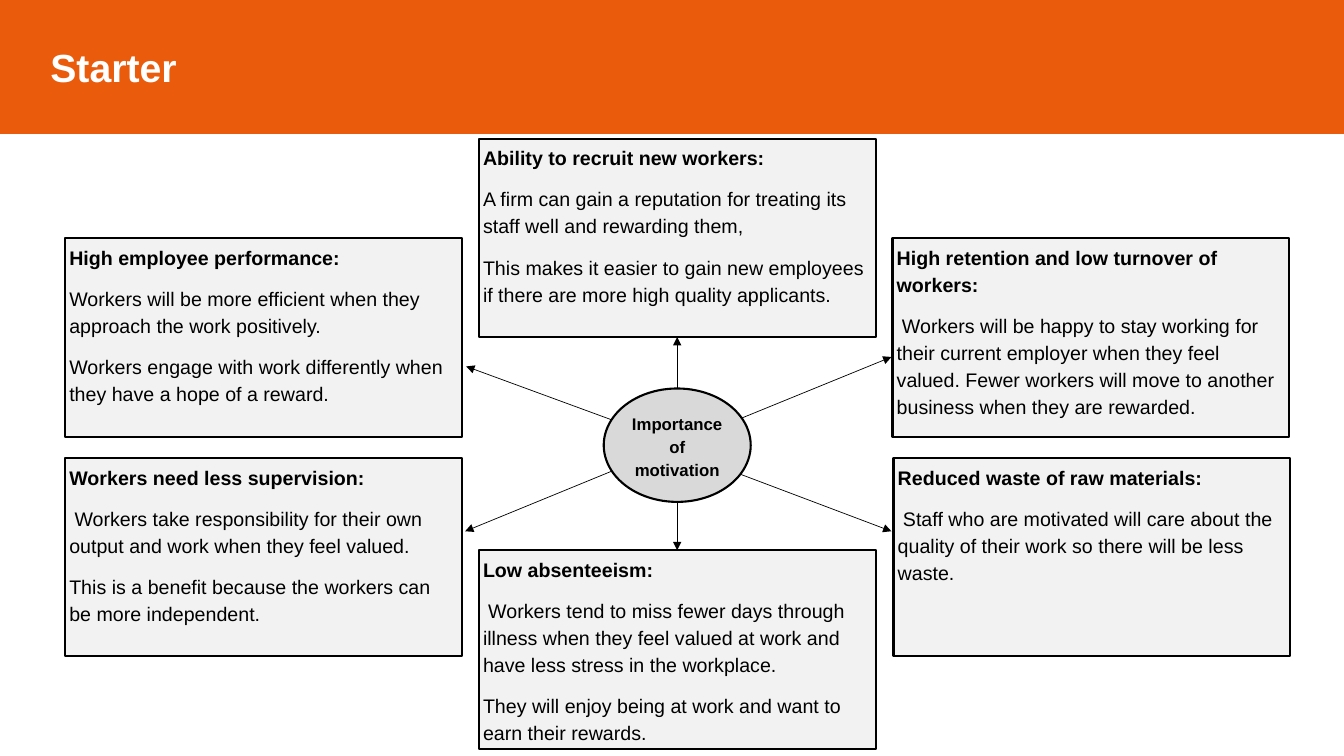
from lxml.etree import SubElement
from pptx import Presentation
from pptx.dml.color import RGBColor
from pptx.enum.shapes import MSO_CONNECTOR, MSO_SHAPE
from pptx.enum.text import MSO_ANCHOR, MSO_AUTO_SIZE, PP_ALIGN
from pptx.oxml.ns import qn
from pptx.util import Pt

PX = 9525  # EMU per pixel, 96 pixels to the inch
FRAME = {"word_wrap": True, "auto_size": MSO_AUTO_SIZE.NONE}
INSETS = {f"margin_{side}": 4 * PX for side in ("left", "top", "right", "bottom")}


def paint(color_format, hex_color):
    color_format.rgb = RGBColor.from_string(hex_color)


def format_shape(shape, fill, line, line_width, paragraphs, frame, paragraph, font, color):
    shape.shadow.inherit = False
    shape.fill.solid()
    paint(shape.fill.fore_color, fill)
    paint(shape.line.color, line)
    shape.line.width = Pt(line_width)
    text_frame = shape.text_frame
    text_frame.text = "\n".join(paragraphs)
    for name, value in {**FRAME, **frame}.items():
        setattr(text_frame, name, value)
    for item in text_frame.paragraphs:
        for name, value in paragraph.items():
            setattr(item, name, value)
        for name, value in {"name": "Arial", **font}.items():
            setattr(item.font, name, value)
        paint(item.font.color, color)


prs = Presentation()
prs.slide_width, prs.slide_height = 1280 * PX, 720 * PX
slide = prs.slides.add_slide(prs.slide_layouts[5])

# Title banner
starter = slide.shapes.title
banner = {"left": 0, "top": 0, "width": 1280, "height": 127}
for name, value in banner.items():
    setattr(starter, name, value * PX)
format_shape(starter, "EA5B0C", "EA5B0C", 1, ["Starter"],
             {"vertical_anchor": MSO_ANCHOR.MIDDLE, "margin_left": 48 * PX},
             {"alignment": PP_ALIGN.LEFT}, {"size": Pt(28), "bold": True}, "FFFFFF")

# Benefit boxes: left, top, indent of the first explanation, heading and explanations
BOX_WIDTH, BOX_HEIGHT = 378, 189
benefits = {
    "performance": (62, 227, 0, [
        "High employee performance:",
        "Workers will be more efficient when they approach the work positively.",
        "Workers engage with work differently when they have a hope of a reward."]),
    "retention": (850, 227, 5, [
        "High retention and low turnover of workers:",
        "Workers will be happy to stay working for their current employer when they feel "
        "valued. Fewer workers will move to another business when they are rewarded."]),
    "recruitment": (456, 132, 0, [
        "Ability to recruit new workers:",
        "A firm can gain a reputation for treating its staff well and rewarding them,",
        "This makes it easier to gain new employees if there are more high quality "
        "applicants."]),
    "supervision": (62, 436, 5, [
        "Workers need less supervision:",
        "Workers take responsibility for their own output and work when they feel valued.",
        "This is a benefit because the workers can be more independent."]),
    "absenteeism": (456, 524, 5, [
        "Low absenteeism:",
        "Workers tend to miss fewer days through illness when they feel valued at work "
        "and have less stress in the workplace.",
        "They will enjoy being at work and want to earn their rewards."]),
    "waste": (851, 436, 5, [
        "Reduced waste of raw materials:",
        "Staff who are motivated will care about the quality of their work so there will "
        "be less waste."]),
}
boxes = {}
for benefit, (left, top, indent, paragraphs) in benefits.items():
    box = slide.shapes.add_shape(MSO_SHAPE.RECTANGLE, left * PX, top * PX,
                                 BOX_WIDTH * PX, BOX_HEIGHT * PX)
    format_shape(box, "F2F2F2", "000000", 1.5, paragraphs,
                 {**INSETS, "vertical_anchor": MSO_ANCHOR.TOP},
                 {"alignment": PP_ALIGN.LEFT, "line_spacing": 1.15, "space_after": Pt(10)},
                 {"size": Pt(14), "bold": False}, "000000")
    heading, explanation = box.text_frame.paragraphs[:2]
    heading.font.bold = True
    explanation._p.get_or_add_pPr().set("indent", str(indent * PX))
    boxes[benefit] = box

# Arrows from the centre: start, end, and the box side they join
arrows = [
    (645, 388, 645, 321, ("recruitment", 2)),
    (645, 467, 645, 524, ("absenteeism", 0)),
    (632, 418, 444, 349, None),
    (643, 424, 443, 506, None),
    (661, 435, 849, 506, None),
    (648, 422, 849, 340, None),
]
for x1, y1, x2, y2, joint in arrows:
    arrow = slide.shapes.add_connector(MSO_CONNECTOR.STRAIGHT,
                                       x1 * PX, y1 * PX, x2 * PX, y2 * PX)
    if joint:
        benefit, side = joint
        arrow.end_connect(boxes[benefit], side)
    paint(arrow.line.color, "000000")
    arrow.line.width = Pt(0.5)
    SubElement(arrow.line._get_or_add_ln(), qn("a:tailEnd"), type="triangle")
    SubElement(arrow._element.spPr, qn("a:effectLst"))

# Central idea, over the arrow starts
motivation = slide.shapes.add_shape(MSO_SHAPE.OVAL, 575 * PX, 370 * PX, 140 * PX, 108 * PX)
format_shape(motivation, "D9D9D9", "000000", 1.5, ["Importance of motivation"],
             {**INSETS, "vertical_anchor": MSO_ANCHOR.MIDDLE},
             {"alignment": PP_ALIGN.CENTER, "line_spacing": 1.15},
             {"size": Pt(12), "bold": True}, "000000")

prs.save("out.pptx")
